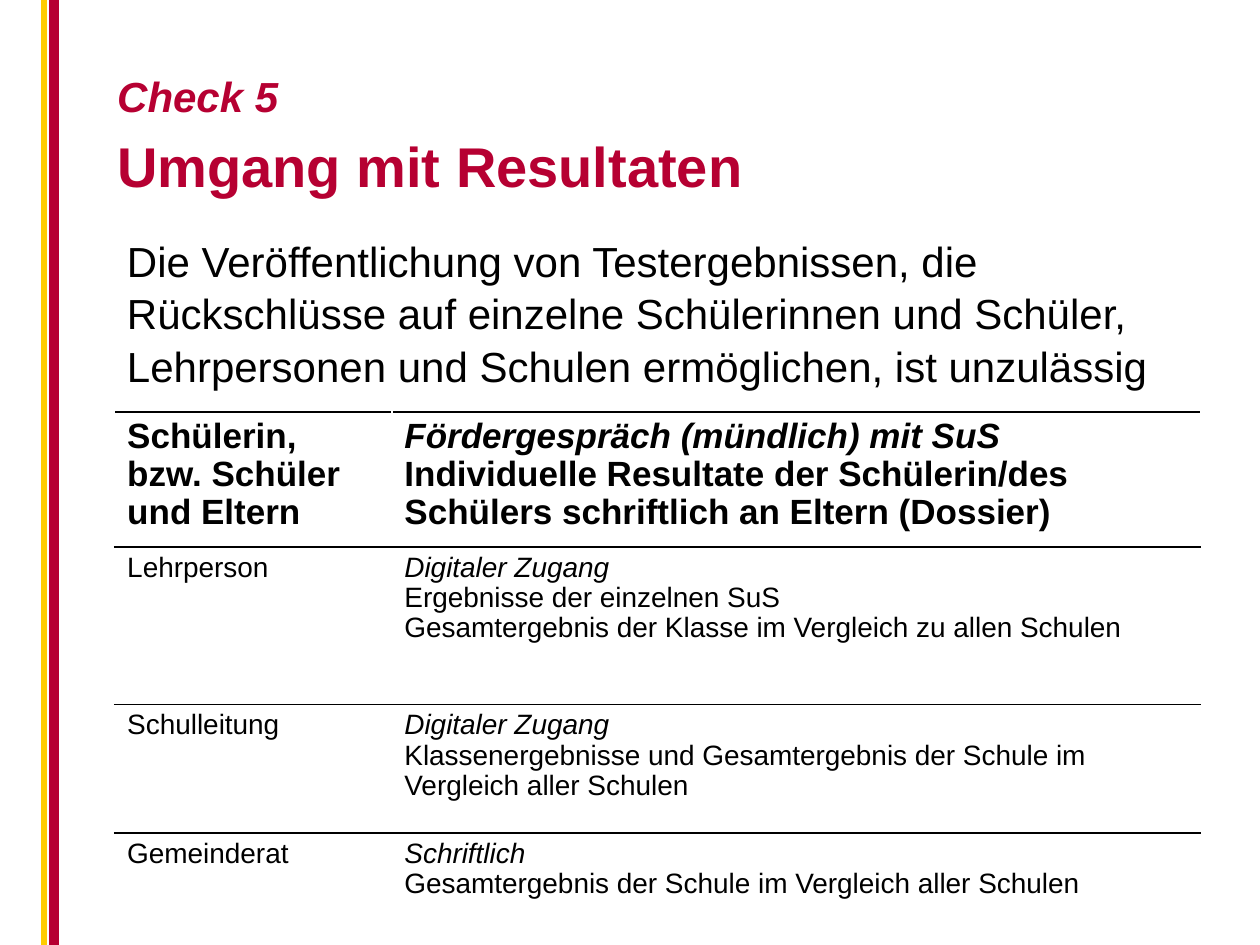
from copy import deepcopy

from pptx import Presentation
from pptx import util as u
from pptx.dml.color import RGBColor
from pptx.enum import shapes, text
from pptx.oxml import ns, xmlchemy

COLORS = {"red": "B60032", "yellow": "FFCC00", "black": "000000", "white": "FFFFFF"}
FONT = "Arial"
COLUMNS = [2.2, 6.42]
ROW_HEIGHTS = [1.03, 1.25, 1.02, 0.98]
ROWS = [
    (["Schülerin, bzw. Schüler und Eltern"],
     ["Fördergespräch (mündlich) mit SuS",
      "Individuelle Resultate der Schülerin/des Schülers schriftlich an Eltern (Dossier)"]),
    (["Lehrperson"],
     ["Digitaler Zugang\nErgebnisse der einzelnen SuS\n"
      "Gesamtergebnis der Klasse im Vergleich zu allen Schulen"]),
    (["Schulleitung"],
     ["Digitaler Zugang\nKlassenergebnisse und Gesamtergebnis der Schule im Vergleich aller Schulen"]),
    (["Gemeinderat"],
     ["Schriftlich\nGesamtergebnis der Schule im Vergleich aller Schulen"]),
]


def rgb(name):
    return RGBColor.from_string(COLORS[name])


def format_run(r, size, color="black", bold=False, italic=False):
    r.font.name = FONT
    r.font.size = u.Pt(size)
    r.font.bold = bold
    r.font.italic = italic
    r.font.color.rgb = rgb(color)


def place(sp, left, top, width, height):
    sp.left, sp.top = u.Inches(left), u.Inches(top)
    sp.width, sp.height = u.Inches(width), u.Inches(height)


def add_stripe(s, x, width, color):
    line = s.shapes.add_connector(
        shapes.MSO_CONNECTOR.STRAIGHT, u.Inches(x), 0, u.Inches(x), u.Inches(7.5))
    line.line.color.rgb = rgb(color)
    line.line.width = u.Pt(width)
    line._element.spPr.append(xmlchemy.OxmlElement("a:effectLst"))


def fill_title(s):
    sp = s.shapes.title
    place(sp, 0.83, 0.36, 8.67, 1.42)
    tf = sp.text_frame
    tf.text = "Check 5\nUmgang mit Resultaten"
    tf.vertical_anchor = text.MSO_ANCHOR.MIDDLE
    tf.auto_size = text.MSO_AUTO_SIZE.NONE
    for p, size, italic in zip(tf.paragraphs, (24, 32), (True, False)):
        p.alignment = text.PP_ALIGN.LEFT
        p.space_before = u.Pt(6)
        p.line_spacing = 1.0
        format_run(p.runs[0], size, "red", True, italic)


def add_statement(s):
    sp = s.shapes.add_textbox(0, 0, 0, 0)
    place(sp, 0.91, 1.69, 8.9, 1.57)
    tf = sp.text_frame
    tf.word_wrap = True
    tf.vertical_anchor = text.MSO_ANCHOR.MIDDLE
    tf.text = ("Die Veröffentlichung von Testergebnissen, die Rückschlüsse auf einzelne "
               "Schülerinnen und Schüler, Lehrpersonen und Schulen ermöglichen, ist unzulässig")
    p = tf.paragraphs[0]
    p.space_before = u.Pt(12)
    p.line_spacing = 1.05
    format_run(p.runs[0], 24)


def set_borders(cell, colors):
    tc_pr = cell._tc.get_or_add_tcPr()
    for i, (side, color) in enumerate(colors.items()):
        ln = xmlchemy.OxmlElement(f"a:ln{side}")
        ln.set("w", str(u.Pt(1)))
        fill = xmlchemy.OxmlElement("a:solidFill")
        clr = xmlchemy.OxmlElement("a:srgbClr")
        clr.set("val", COLORS[color])
        fill.append(clr)
        ln.append(fill)
        tc_pr.insert(i, ln)


def fill_cell(cell, paragraphs, size, bold, lead_italic):
    cell.fill.background()
    tf = cell.text_frame
    tf.text = paragraphs[0]
    for line in paragraphs[1:]:
        tf.add_paragraph().text = line
    for p in tf.paragraphs:
        p.line_spacing = 0.97
    runs = [r for p in tf.paragraphs for r in p.runs]
    for i, r in enumerate(runs):
        format_run(r, size, bold=bold, italic=lead_italic and i == 0)
    for p in tf.paragraphs:
        for br in p._p.findall(ns.qn("a:br")):
            br.append(deepcopy(p.runs[0]._r.rPr))


def add_access_table(s):
    frame = s.shapes.add_table(
        len(ROWS), len(COLUMNS), u.Inches(0.91), u.Inches(3.27),
        u.Inches(sum(COLUMNS)), u.Inches(sum(ROW_HEIGHTS)))
    table = frame.table
    table.first_row = table.horz_banding = False
    for column, width in zip(table.columns, COLUMNS):
        column.width = u.Inches(width)
    for i, (row, height) in enumerate(zip(ROWS, ROW_HEIGHTS)):
        table.rows[i].height = u.Inches(height)
        bottom = "white" if i == len(ROWS) - 1 else "black"
        for j, paragraphs in enumerate(row):
            cell = table.cell(i, j)
            fill_cell(cell, paragraphs, 20 if i == 0 else 16, i == 0, j == 1)
            set_borders(cell, {"L": "white", "R": "white", "T": "black", "B": bottom})


def main():
    prs = Presentation()
    prs.slide_width, prs.slide_height = u.Inches(10), u.Inches(7.5)
    s = prs.slides.add_slide(prs.slide_layouts[5])
    add_stripe(s, 0.43, 6, "red")
    add_stripe(s, 0.35, 3, "yellow")
    fill_title(s)
    add_statement(s)
    add_access_table(s)
    prs.save("out.pptx")


if __name__ == "__main__":
    main()
